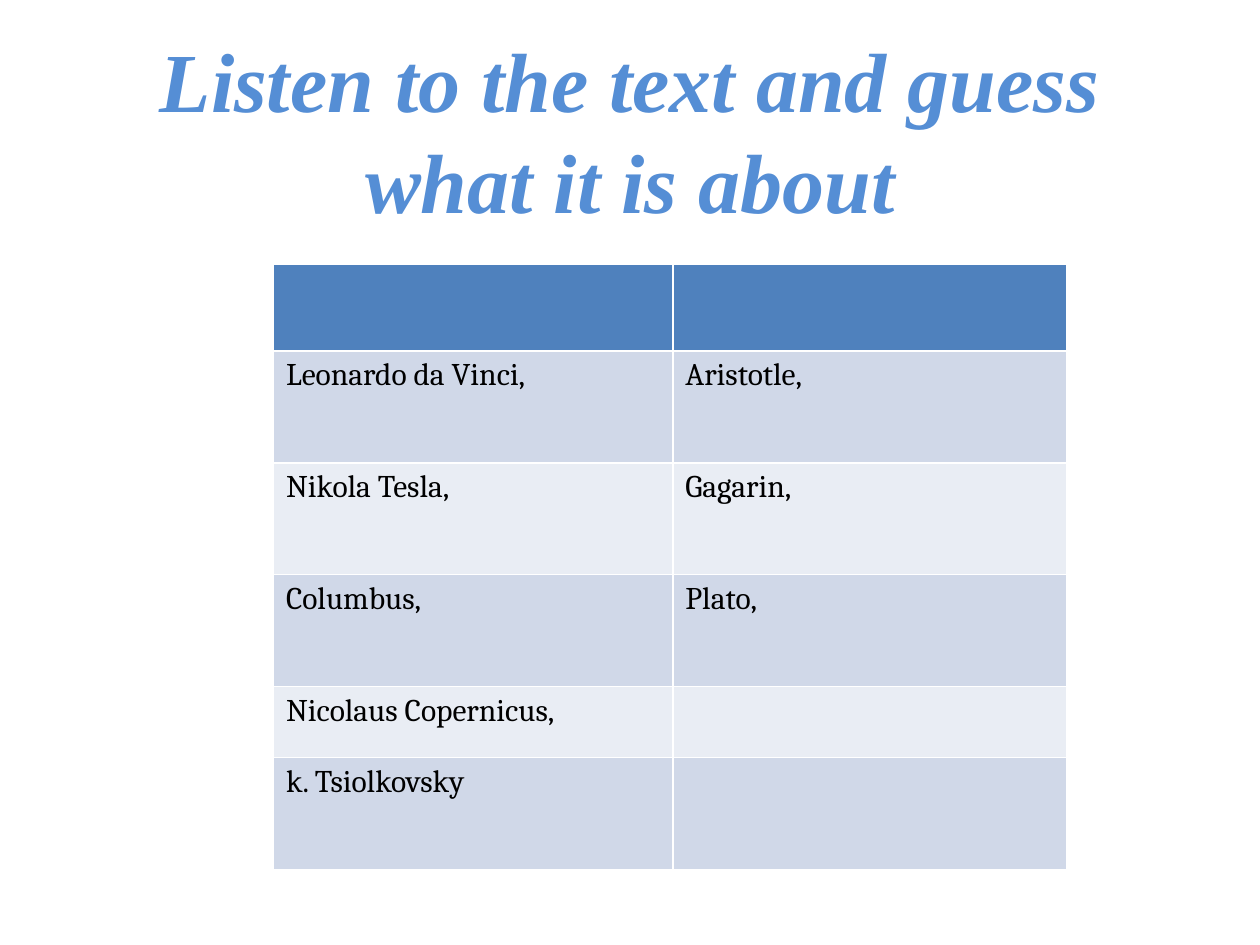
from dataclasses import dataclass

from pptx import Presentation
from pptx.dml.color import RGBColor
from pptx.enum import text
from pptx.util import Pt


@dataclass(frozen=True)
class Theme:
    title_font: str = "Times New Roman"
    title_size: float = 48
    title_color: str = "558ED5"
    body_font: str = "Cambria"
    body_size: float = 18
    body_color: str = "000000"
    header_fill: str = "4F81BD"
    band_fills: tuple[str, str] = ("D0D8E8", "E9EDF4")


@dataclass(frozen=True)
class Box:
    left: float
    top: float
    width: float
    height: float

    def lengths(self) -> tuple[Pt, Pt, Pt, Pt]:
        return Pt(self.left), Pt(self.top), Pt(self.width), Pt(self.height)


@dataclass(frozen=True)
class Row:
    height: float
    names: tuple[str, str] = ("", "")


THEME = Theme()
TITLE_BOX = Box(54, 31.5, 612, 85)
TABLE_BOX = Box(156.25, 151.2, 453.6, 345.6)
COLUMN_WIDTHS = (228.25, 225.35)
ROWS = (
    Row(49.35),
    Row(63.95, ("Leonardo da Vinci,", "Aristotle,")),
    Row(63.95, ("Nikola Tesla,", "Gagarin,")),
    Row(63.95, ("Columbus,", "Plato,")),
    Row(40.45, ("Nicolaus Copernicus,", "")),
    Row(63.95, ("k. Tsiolkovsky", "")),
)


def format_runs(p, font: str, size: float, color: str, emphasis: bool = False) -> None:
    for r in p.runs:
        r.font.name = font
        r.font.size = Pt(size)
        r.font.color.rgb = RGBColor.from_string(color)
        r.font.bold = r.font.italic = emphasis


def add_title(s, title: str, box: Box) -> None:
    sp = s.shapes.title
    sp.left, sp.top, sp.width, sp.height = box.lengths()
    tf = sp.text_frame
    tf.text = title
    tf.word_wrap = True
    tf.auto_size = text.MSO_AUTO_SIZE.NONE
    tf.vertical_anchor = text.MSO_ANCHOR.MIDDLE
    p = tf.paragraphs[0]
    p.alignment = text.PP_ALIGN.CENTER
    format_runs(p, THEME.title_font, THEME.title_size, THEME.title_color, True)


def add_names_table(s, rows: tuple[Row, ...], box: Box) -> None:
    table = s.shapes.add_table(len(rows), len(COLUMN_WIDTHS), *box.lengths()).table
    for column, width in zip(table.columns, COLUMN_WIDTHS):
        column.width = Pt(width)
    for i, row in enumerate(rows):
        table.rows[i].height = Pt(row.height)
        fill = THEME.band_fills[(i - 1) % 2] if i else THEME.header_fill
        for j, name in enumerate(row.names):
            cell = table.cell(i, j)
            cell.fill.solid()
            cell.fill.fore_color.rgb = RGBColor.from_string(fill)
            if name:
                cell.text_frame.text = name
                format_runs(cell.text_frame.paragraphs[0],
                            THEME.body_font, THEME.body_size, THEME.body_color)


def main() -> None:
    prs = Presentation()
    prs.slide_width, prs.slide_height = Pt(720), Pt(540)
    s = prs.slides.add_slide(prs.slide_layouts[5])
    add_title(s, "Listen to the text and guess what it is about", TITLE_BOX)
    add_names_table(s, ROWS, TABLE_BOX)
    prs.save("out.pptx")


if __name__ == "__main__":
    main()
